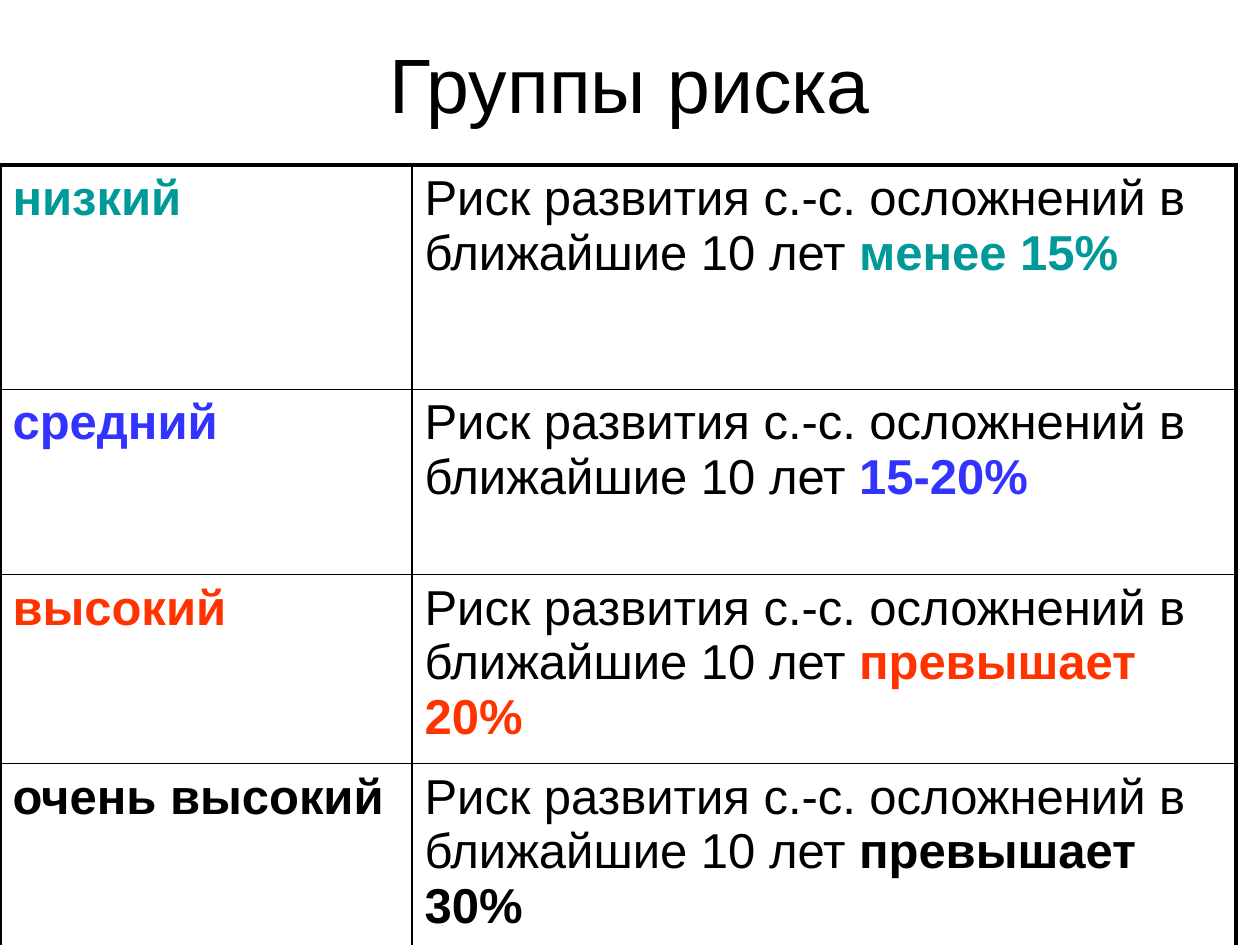
from dataclasses import dataclass

from lxml import etree
from pptx import Presentation
from pptx.dml.color import RGBColor
from pptx.enum.text import MSO_ANCHOR, PP_ALIGN
from pptx.oxml.ns import qn
from pptx.util import Inches, Pt

CENTER = PP_ALIGN.CENTER
MIDDLE = MSO_ANCHOR.MIDDLE
FONT = "Arial"
COLORS = {
    "black": "000000",
    "teal": "009999",
    "blue": "3333FF",
    "red": "FF3300",
}
THIN, THICK = 1, 2.25
COLUMN_WIDTHS = (3.27, 6.54)
RISK_TEXT = "Риск развития с.-с. осложнений в ближайшие 10 лет "


@dataclass(frozen=True)
class RiskGroup:
    name: str
    risk: str
    color: str
    height: float


RISK_GROUPS = (
    RiskGroup("низкий", "менее 15%", "teal", 1.78),
    RiskGroup("средний", "15-20%", "blue", 1.47),
    RiskGroup("высокий", "превышает 20%", "red", 1.47),
    RiskGroup("очень высокий", "превышает 30%", "black", 1.47),
)


def add_text(paragraph, text: str, *, size: float = 28, color: str = "black",
             bold: bool = False) -> None:
    run = paragraph.add_run()
    run.text = text
    run.font.name = FONT
    run.font.size = Pt(size)
    run.font.bold = bold
    run.font.color.rgb = RGBColor.from_string(COLORS[color])


def set_borders(cell, widths: dict[str, float]) -> None:
    properties = cell._tc.get_or_add_tcPr()
    for side, width in widths.items():
        line = etree.SubElement(properties, qn(f"a:ln{side}"), w=str(Pt(width)))
        fill = etree.SubElement(line, qn("a:solidFill"))
        etree.SubElement(fill, qn("a:srgbClr"), val=COLORS["black"])


def add_title(slide, text: str) -> None:
    shape = slide.shapes.add_textbox(Inches(0.5), Inches(0), Inches(9), Inches(1.31))
    frame = shape.text_frame
    frame.word_wrap = True
    frame.vertical_anchor = MIDDLE
    paragraph = frame.paragraphs[0]
    paragraph.alignment = CENTER
    add_text(paragraph, text, size=44)


def add_risk_table(slide, groups: tuple[RiskGroup, ...]) -> None:
    height = sum(group.height for group in groups)
    table = slide.shapes.add_table(
        len(groups), len(COLUMN_WIDTHS), Inches(0), Inches(1.31),
        Inches(sum(COLUMN_WIDTHS)), Inches(height),
    ).table
    table.first_row = False
    table.horz_banding = False
    for column, width in zip(table.columns, COLUMN_WIDTHS):
        column.width = Inches(width)
    last_row, last_column = len(groups) - 1, len(COLUMN_WIDTHS) - 1
    for row_index, group in enumerate(groups):
        table.rows[row_index].height = Inches(group.height)
        name_cell, risk_cell = table.rows[row_index].cells
        add_text(name_cell.text_frame.paragraphs[0], group.name,
                 color=group.color, bold=True)
        risk_paragraph = risk_cell.text_frame.paragraphs[0]
        add_text(risk_paragraph, RISK_TEXT)
        add_text(risk_paragraph, group.risk, color=group.color, bold=True)
        for column_index, cell in enumerate((name_cell, risk_cell)):
            set_borders(cell, {
                "L": THICK if column_index == 0 else THIN,
                "R": THICK if column_index == last_column else THIN,
                "T": THICK if row_index == 0 else THIN,
                "B": THICK if row_index == last_row else THIN,
            })
            cell.fill.background()


def main() -> None:
    presentation = Presentation()
    presentation.slide_width = Inches(10)
    presentation.slide_height = Inches(7.5)
    slide = presentation.slides.add_slide(presentation.slide_layouts[6])
    add_title(slide, "Группы риска")
    add_risk_table(slide, RISK_GROUPS)
    presentation.save("out.pptx")


if __name__ == "__main__":
    main()
